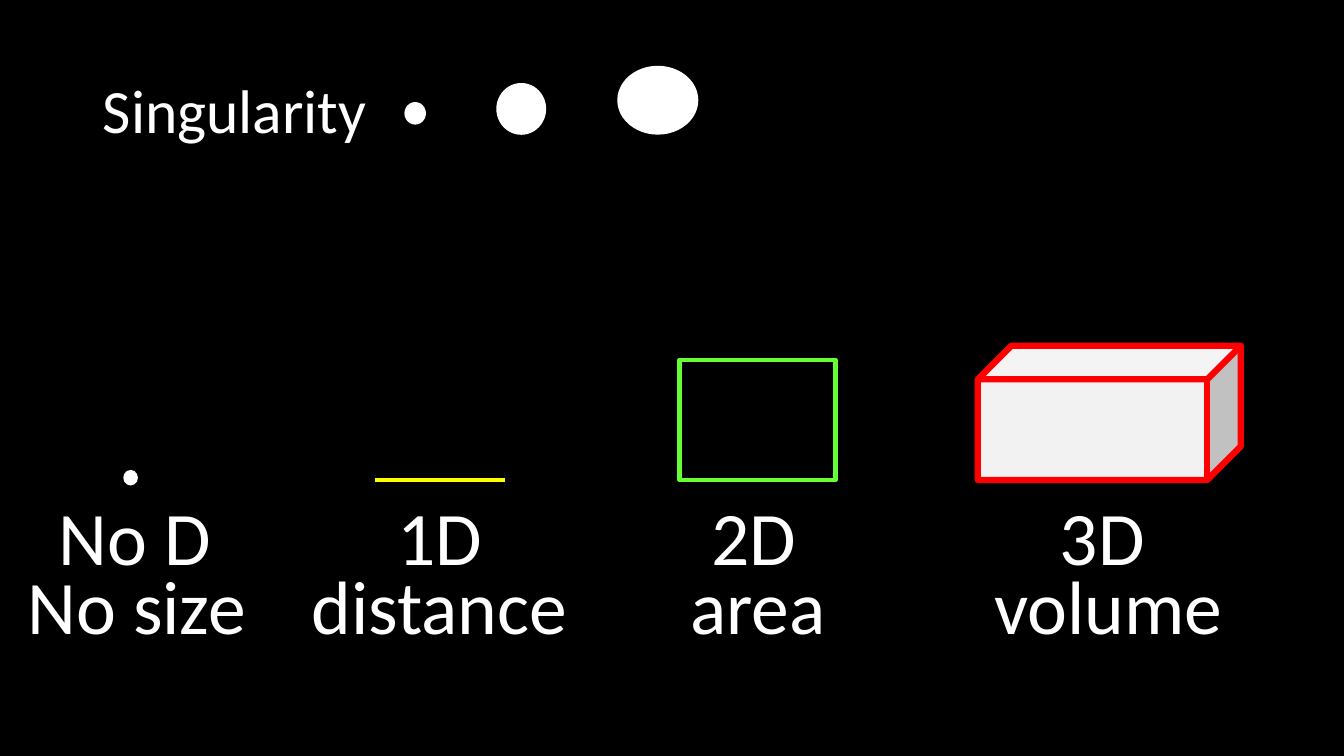
"""Build the slide on the singularity and the dimensions of space."""
from lxml.etree import SubElement
from pptx import Presentation
from pptx.dml.color import RGBColor
from pptx.enum.shapes import MSO_CONNECTOR, MSO_SHAPE
from pptx.enum.text import MSO_ANCHOR, MSO_AUTO_SIZE, PP_ALIGN
from pptx.oxml.ns import qn
from pptx.util import Pt

WHITE, BLACK = "FFFFFF", "000000"
FONT = "Calibri"
TITLE = "Singularity"
TITLE_BOX = (66.2, 28.8, 828, 104.4)
FIGURES = [
    (MSO_SHAPE.OVAL, (88.6, 336.2, 9.4, 10.1), WHITE, WHITE, 1),
    (MSO_SHAPE.RECTANGLE, (485.3, 257, 111.6, 85.7), None, "66FF33", 3),
    (MSO_SHAPE.CUBE, (698.4, 247, 187.9, 95.8), "F2F2F2", "FF0000", 4.5),
    (MSO_SHAPE.OVAL, (289.4, 73.4, 14.4, 15.1), WHITE, WHITE, 1),
    (MSO_SHAPE.OVAL, (355, 59.8, 34.6, 36), WHITE, WHITE, 1),
    (MSO_SHAPE.OVAL, (441.4, 47.5, 56.9, 48.2), WHITE, WHITE, 1),
]
DISTANCE_LINE = (267.8, 342.7, 360.7, 342.7)
LABEL_TOPS = (346.3, 396)
LABEL_HEIGHT = 72.7
LABELS = [
    (("No D", 96.1, 124.6), ("No size", 97.6, 172.1)),
    (("1D", 314.3, 75.6), ("distance", 313.9, 198.7)),
    (("2D", 538.2, 75.6), ("area", 541.4, 112.3)),
    (("3D", 787.3, 75.6), ("volume", 791.6, 179.3)),
]


def color(value):
    return RGBColor.from_string(value)


def points(lengths):
    return [Pt(length) for length in lengths]


def write(frame, text, size, align):
    frame.text = text
    paragraph = frame.paragraphs[0]
    paragraph.alignment = align
    paragraph.font.name = FONT
    paragraph.font.size = Pt(size)
    paragraph.font.color.rgb = color(WHITE)
    return paragraph


def add_title(slide):
    title = slide.shapes.title
    title.left, title.top, title.width, title.height = points(TITLE_BOX)
    title.text_frame.vertical_anchor = MSO_ANCHOR.MIDDLE
    title.text_frame.auto_size = MSO_AUTO_SIZE.NONE
    write(title.text_frame, TITLE, 44, PP_ALIGN.LEFT).line_spacing = 0.9


def add_figure(slide, preset, box, fill, outline, weight):
    figure = slide.shapes.add_shape(preset, *points(box))
    figure.shadow.inherit = False
    if fill:
        figure.fill.solid()
        figure.fill.fore_color.rgb = color(fill)
    else:
        figure.fill.background()
    figure.line.color.rgb = color(outline)
    figure.line.width = Pt(weight)


def add_distance_line(slide):
    line = slide.shapes.add_connector(MSO_CONNECTOR.STRAIGHT, *points(DISTANCE_LINE))
    line.line.color.rgb = color("FFFF00")
    line.line.width = Pt(3)
    SubElement(line._element.spPr, qn("a:effectLst"))


def add_label(slide, text, center, width, top):
    box = points((center - width / 2, top, width, LABEL_HEIGHT))
    frame = slide.shapes.add_textbox(*box).text_frame
    frame.word_wrap = False
    frame.auto_size = MSO_AUTO_SIZE.SHAPE_TO_FIT_TEXT
    write(frame, text, 54, PP_ALIGN.CENTER)


def main():
    deck = Presentation()
    deck.slide_width, deck.slide_height = Pt(960), Pt(540)
    slide = deck.slides.add_slide(deck.slide_layouts.get_by_name("Title Only"))
    slide.background.fill.solid()
    slide.background.fill.fore_color.rgb = color(BLACK)
    add_title(slide)
    for figure in FIGURES:
        add_figure(slide, *figure)
    add_distance_line(slide)
    for column in LABELS:
        for label, top in zip(column, LABEL_TOPS):
            add_label(slide, *label, top)
    deck.save("out.pptx")


if __name__ == "__main__":
    main()
